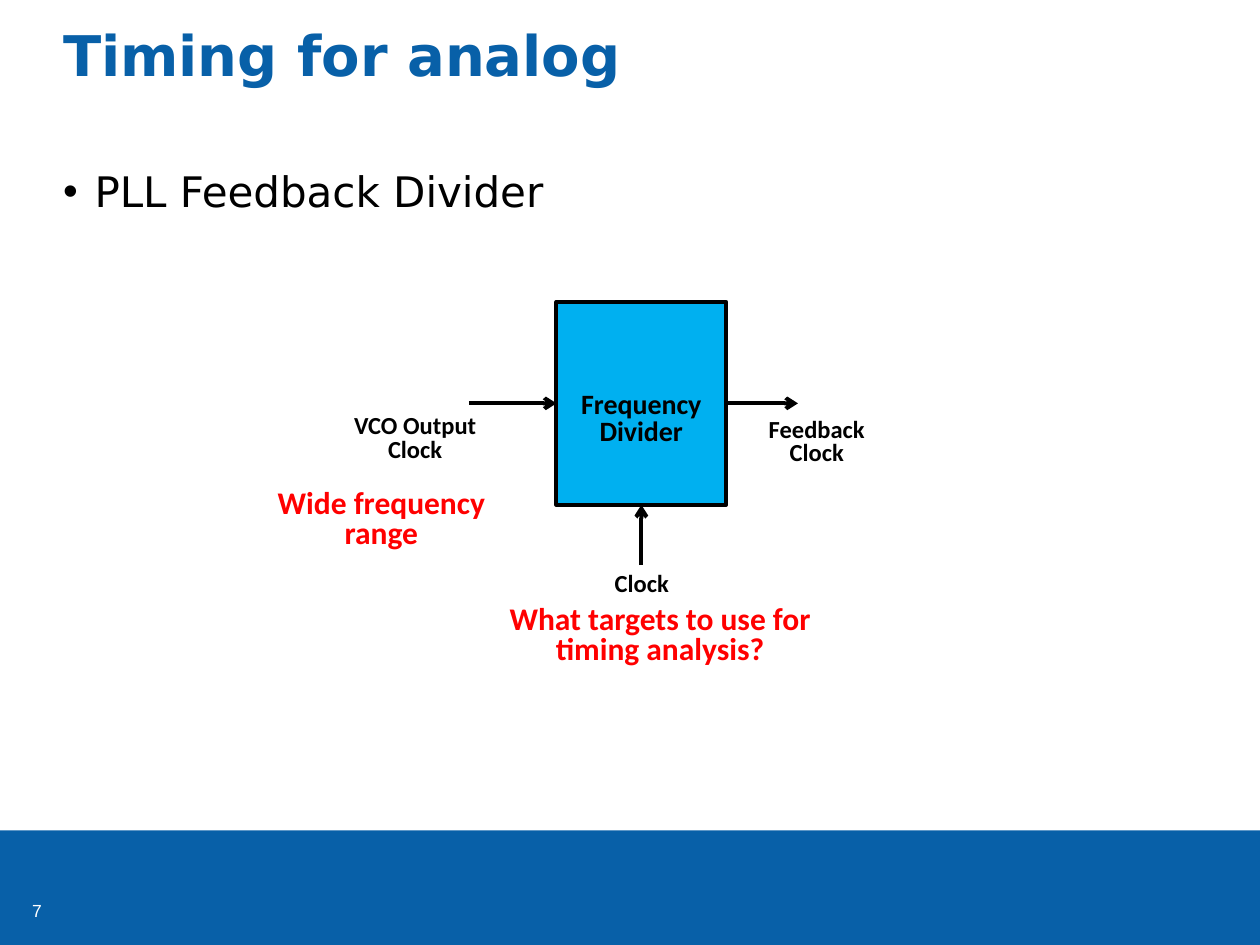
"""Build the slide on timing for a PLL feedback divider."""
import pptx
import pptx.dml.color
import pptx.enum.shapes
import pptx.enum.text
import pptx.oxml
import pptx.oxml.ns
import pptx.util

Pt = pptx.util.Pt
ALIGN = pptx.enum.text.PP_ALIGN
ANCHOR = pptx.enum.text.MSO_ANCHOR
RECT = pptx.enum.shapes.MSO_SHAPE.RECTANGLE
STRAIGHT = pptx.enum.shapes.MSO_CONNECTOR.STRAIGHT
BLUE, BLACK, WHITE, RED = "0860A8", "000000", "FFFFFF", "FF0000"


def color(fmt, value):
    fmt.rgb = pptx.dml.color.RGBColor.from_string(value)


def write(sp, text, font, size, value, bold=False, frame={}, para={}):
    tf = sp.text_frame
    for name, setting in {"word_wrap": True, **frame}.items():
        setattr(tf, name, setting)
    p = tf.paragraphs[0]
    for name, setting in {"alignment": ALIGN.LEFT, **para}.items():
        setattr(p, name, setting)
    r = p.add_run()
    r.text = text
    for name, setting in {"name": font, "size": Pt(size), "bold": bold}.items():
        setattr(r.font, name, setting)
    color(r.font.color, value)
    return p


prs = pptx.Presentation()
prs.slide_width, prs.slide_height = Pt(720), Pt(540)
s = prs.slides.add_slide(prs.slide_layouts[6])

band = s.shapes.add_shape(RECT, Pt(0), Pt(474.5), Pt(720), Pt(65.5))
band.shadow.inherit = False
band.fill.solid()
color(band.fill.fore_color, BLUE)
band.line.fill.background()

number = s.shapes.add_textbox(Pt(0), Pt(494), Pt(31), Pt(36))
write(number, "7", "Arial", 10, WHITE,
      frame={"vertical_anchor": ANCHOR.BOTTOM}, para={"alignment": ALIGN.RIGHT})

flush = dict.fromkeys(["margin_left", "margin_top", "margin_right", "margin_bottom"], Pt(0))
title = s.shapes.add_textbox(Pt(36), Pt(12), Pt(649), Pt(70))
write(title, "Timing for analog", "DejaVu Sans", 32, BLUE, True, flush)

body = s.shapes.add_textbox(Pt(36), Pt(94.5), Pt(649), Pt(380))
p = write(body, "PLL Feedback Divider", "DejaVu Sans", 24, BLACK, frame=flush)
pPr = p._p.get_or_add_pPr()
pPr.set("marL", str(Pt(18)))
pPr.set("indent", str(-Pt(18)))
ns = pptx.oxml.ns.nsdecls("a")
pPr.append(pptx.oxml.parse_xml(f'<a:buFont {ns} typeface="Arial"/>'))
pPr.append(pptx.oxml.parse_xml(f'<a:buChar {ns} char="•"/>'))

tight = {"alignment": ALIGN.CENTER, "line_spacing": 0.8}
left, top, width, height = 318, 172.5, 97, 116
center, middle = left + width / 2, top + height / 2
divider = s.shapes.add_shape(RECT, Pt(left), Pt(top), Pt(width), Pt(height))
divider.shadow.inherit = False
divider.fill.solid()
color(divider.fill.fore_color, "00B0F0")
color(divider.line.color, BLACK)
divider.line.width = Pt(2.25)
write(divider, "Frequency Divider", "Calibri", 16, BLACK, True,
      {"vertical_anchor": ANCHOR.MIDDLE, "margin_top": Pt(22.5)}, tight)

arrows = [
    ((268, middle), (left, middle), "end", 1),
    ((center, 323), (center, top + height), "end", 2),
    ((left + width, middle), (456, middle), "begin", 3),
]
for start, end, joined, site in arrows:
    c = s.shapes.add_connector(STRAIGHT, *map(Pt, start + end))
    if joined == "begin":
        c.begin_connect(divider, site)
    else:
        c.end_connect(divider, site)
    color(c.line.color, BLACK)
    c.line.width = Pt(2.25)
    c.line._get_or_add_ln().append(pptx.oxml.parse_xml(f'<a:tailEnd {ns} type="arrow"/>'))
    c._element.spPr.append(pptx.oxml.parse_xml(f"<a:effectLst {ns}/>"))

labels = [
    ("VCO Output Clock", 181.5, 234, 111.5, 34.5, 14, BLACK),
    ("Feedback Clock", 425, 236, 83.5, 34.5, 14, BLACK),
    ("Clock", 325, 324, 83.5, 21, 14, BLACK),
    ("Wide frequency range", 138, 276.5, 160, 42.5, 18, RED),
    ("What targets to use for timing analysis?", 283, 343, 188.5, 42.5, 18, RED),
]
grow = {"auto_size": pptx.enum.text.MSO_AUTO_SIZE.SHAPE_TO_FIT_TEXT}
for text, x, y, w, h, size, value in labels:
    sp = s.shapes.add_textbox(Pt(x), Pt(y), Pt(w), Pt(h))
    write(sp, text, "Calibri", size, value, True, grow, tight)

prs.save("out.pptx")
